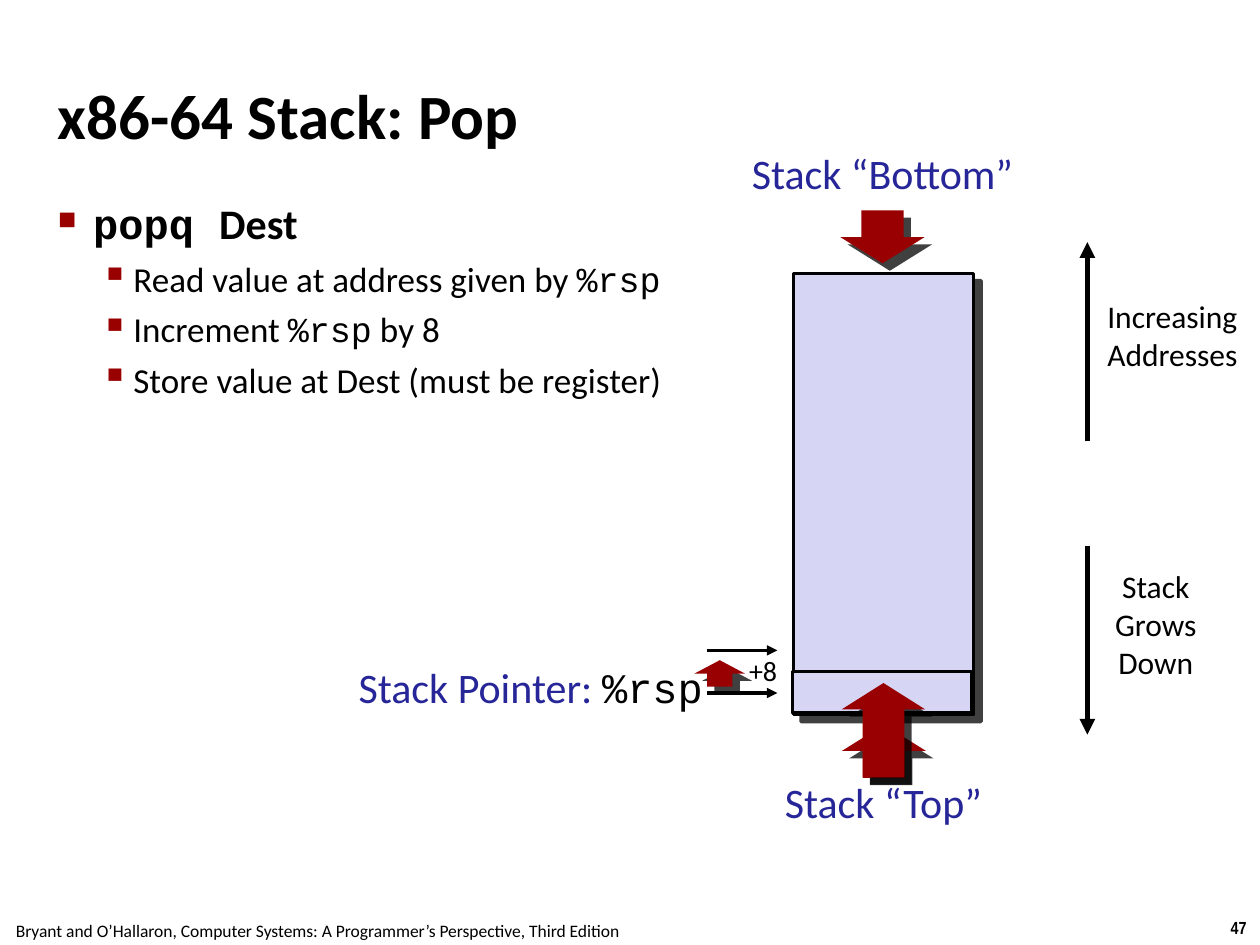
from dataclasses import dataclass

from lxml.etree import SubElement
from pptx import Presentation
from pptx.dml.color import RGBColor
from pptx.enum.shapes import MSO_CONNECTOR as Link, MSO_SHAPE as Kind
from pptx.enum.text import MSO_ANCHOR as Anchor, PP_ALIGN as Align
from pptx.oxml.ns import qn
from pptx.util import Cm, Pt

BLACK, WHITE, RED, BLUE, LILAC = "000000", "FFFFFF", "980002", "262699", "D6D6F4"
SANS, MONO = "Calibri", "Courier New"


@dataclass
class Run:
    text: str
    size: float
    font: str = SANS
    color: str = BLACK
    bold: bool = False


@dataclass
class Box:
    x: float
    y: float
    w: float
    h: float

    def lengths(self) -> list:
        return [Cm(v) for v in (self.x, self.y, self.w, self.h)]


@dataclass
class Label:
    box: Box
    lines: list
    align: Align = Align.CENTER
    pad: float = 0
    wrap: bool = False
    fill: str = ""


@dataclass
class Arrow:
    box: Box
    head: float
    down: bool = False


@dataclass
class Bullet:
    char: str
    scale: int
    color: str
    left: float
    hang: float
    gap: float


@dataclass
class Line:
    x1: float
    y1: float
    x2: float
    y2: float
    width: float = 2
    tip: bool = True


def paint(target, color: str) -> None:
    target.solid()
    target.fore_color.rgb = RGBColor.from_string(color)


def add_shadow(shape) -> None:
    effects = shape._element.spPr.find(qn("a:effectLst"))
    outer = SubElement(effects, qn("a:outerShdw"), dist=str(Pt(6)), dir="2700000",
                       algn="ctr", rotWithShape="0")
    tone = SubElement(outer, qn("a:srgbClr"), val=BLACK)
    SubElement(tone, qn("a:alpha"), val="75000")


def add_runs(para, runs: list) -> None:
    for item in runs:
        run = para.add_run()
        run.text = item.text
        font = run.font
        font.size, font.name, font.bold = Pt(item.size), item.font, item.bold
        paint(font.fill, item.color)


def add_label(slide, label: Label, anchor: Anchor = Anchor.TOP):
    shape = slide.shapes.add_textbox(*label.box.lengths())
    if label.fill:
        paint(shape.fill, label.fill)
    frame = shape.text_frame
    frame.word_wrap, frame.vertical_anchor = label.wrap, anchor
    frame.margin_left = frame.margin_right = Cm(label.pad)
    frame.margin_top = frame.margin_bottom = Cm(label.pad)
    for i, runs in enumerate(label.lines):
        para = frame.add_paragraph() if i else frame.paragraphs[0]
        para.alignment = label.align
        add_runs(para, runs)
    return frame


def add_bullet(para, mark: Bullet) -> None:
    para.space_before = Pt(mark.gap)
    props = para._p.get_or_add_pPr()
    props.set("marL", str(Cm(mark.left)))
    props.set("indent", str(-Cm(mark.hang)))
    tone = SubElement(props, qn("a:buClr"))
    SubElement(tone, qn("a:srgbClr"), val=mark.color)
    SubElement(props, qn("a:buSzPct"), val=str(mark.scale * 1000))
    SubElement(props, qn("a:buChar"), char=mark.char)


def add_rect(slide, box: Box, shadow: bool = False) -> None:
    shape = slide.shapes.add_shape(Kind.RECTANGLE, *box.lengths())
    shape.shadow.inherit = False
    paint(shape.fill, LILAC)
    paint(shape.line.fill, BLACK)
    shape.line.width = Pt(2)
    if shadow:
        add_shadow(shape)


def add_line(slide, line: Line) -> None:
    ends = [Cm(v) for v in (line.x1, line.y1, line.x2, line.y2)]
    link = slide.shapes.add_connector(Link.STRAIGHT, *ends)
    paint(link.line.fill, BLACK)
    link.line.width = Pt(line.width)
    props = link._element.spPr
    if line.tip:
        SubElement(props.find(qn("a:ln")), qn("a:tailEnd"), type="triangle")
    SubElement(props, qn("a:effectLst"))


def add_arrow(slide, arrow: Arrow) -> None:
    """Block arrow whose shaft is half as wide as its head."""
    box, head = arrow.box, arrow.head
    points = [(0, head), (0.25, head), (0.25, box.h), (0.75, box.h),
              (0.75, head), (1, head), (0.5, 0)]
    spots = [(Cm(box.x + u * box.w), Cm(box.y + (box.h - v if arrow.down else v)))
             for u, v in points]
    outline = slide.shapes.build_freeform(*spots[0])
    outline.add_line_segments(spots[1:], close=True)
    shape = outline.convert_to_shape()
    shape.shadow.inherit = False
    paint(shape.fill, RED)
    shape.line.fill.background()
    add_shadow(shape)


def main() -> None:
    deck = Presentation()
    deck.slide_width, deck.slide_height = Cm(25.4), Cm(19.05)
    slide = deck.slides.add_slide(deck.slide_layouts[6])

    # Footer and title
    add_label(slide, Label(Box(24.54, 18.36, 0.86, 0.69),
                           [[Run("47", 10, "Arial Narrow", bold=True)]], pad=0.13))
    add_label(slide, Label(Box(-0.05, 18.42, 12.9, 0.69), [[Run(
        "Bryant and O’Hallaron, Computer Systems: A Programmer’s Perspective, Third Edition",
        10)]], pad=0.13))
    add_label(slide, Label(Box(1.07, 0.71, 23.29, 3.18),
                           [[Run("x86-64 Stack: Pop", 36, bold=True)]],
                           Align.LEFT, 0.1, True), Anchor.MIDDLE)

    # Stack with its last slot
    add_arrow(slide, Arrow(Box(16.97, 14.61, 1.7, 1.07), 0.53))
    add_rect(slide, Box(16, 5.51, 3.63, 8.89), shadow=True)
    add_arrow(slide, Arrow(Box(16.94, 4.24, 1.7, 1.07), 0.53, down=True))
    add_rect(slide, Box(15.98, 13.54, 3.61, 0.84))
    add_arrow(slide, Arrow(Box(16.97, 13.77, 1.68, 1.9), 0.53))

    # Pointer move and address direction
    add_arrow(slide, Arrow(Box(14, 13.31, 1.02, 0.53), 0.27))
    for line in (Line(14.25, 13.97, 15.67, 13.97), Line(14.25, 13.11, 15.67, 13.11),
                 Line(15.98, 13.54, 19.58, 13.54, tip=False),
                 Line(21.92, 11, 21.92, 14.81, 3), Line(21.92, 8.89, 21.92, 4.88, 3)):
        add_line(slide, line)

    # Labels
    for label in (
        Label(Box(7.11, 13.34, 7.06, 1.02),
              [[Run("Stack Pointer: ", 24, color=BLUE), Run("%rsp", 24, MONO)]], Align.RIGHT),
        Label(Box(22.17, 11.43, 2.26, 2.54),
              [[Run("Stack Grows", 18)], [Run("Down", 18)]], wrap=True, fill=WHITE),
        Label(Box(22.2, 5.99, 2.87, 1.75),
              [[Run("Increasing", 18)], [Run("Addresses", 18)]], fill=WHITE),
        Label(Box(15.65, 15.65, 4.32, 1.24), [[Run("Stack “Top”", 24, color=BLUE)]]),
        Label(Box(14.96, 2.97, 5.66, 1.24), [[Run("Stack “Bottom”", 24, color=BLUE)]]),
        Label(Box(14.99, 13.08, 0.79, 0.89), [[Run("+8", 16)]], pad=0.1),
    ):
        add_label(slide, label)

    # Instruction and its steps
    body = add_label(slide, Label(Box(1.07, 3.89, 23.29, 15.09), [
        [Run("popq ", 24, MONO, bold=True), Run("Dest", 24, bold=True)],
        [Run("Read value at address given by ", 20), Run("%rsp", 20, MONO)],
        [Run("Increment ", 20), Run("%rsp", 20, MONO), Run(" by 8", 20)],
        [Run("Store value at Dest (must be register)", 20)],
    ], Align.LEFT, 0.1, True))
    top = Bullet("■", 60, "990000", 0.71, 0.71, 6)
    step = Bullet("▪", 110, "990000", 1.52, 0.66, 5)
    for i, para in enumerate(body.paragraphs):
        para.level = min(i, 1)
        add_bullet(para, step if i else top)

    deck.save("out.pptx")


if __name__ == "__main__":
    main()
